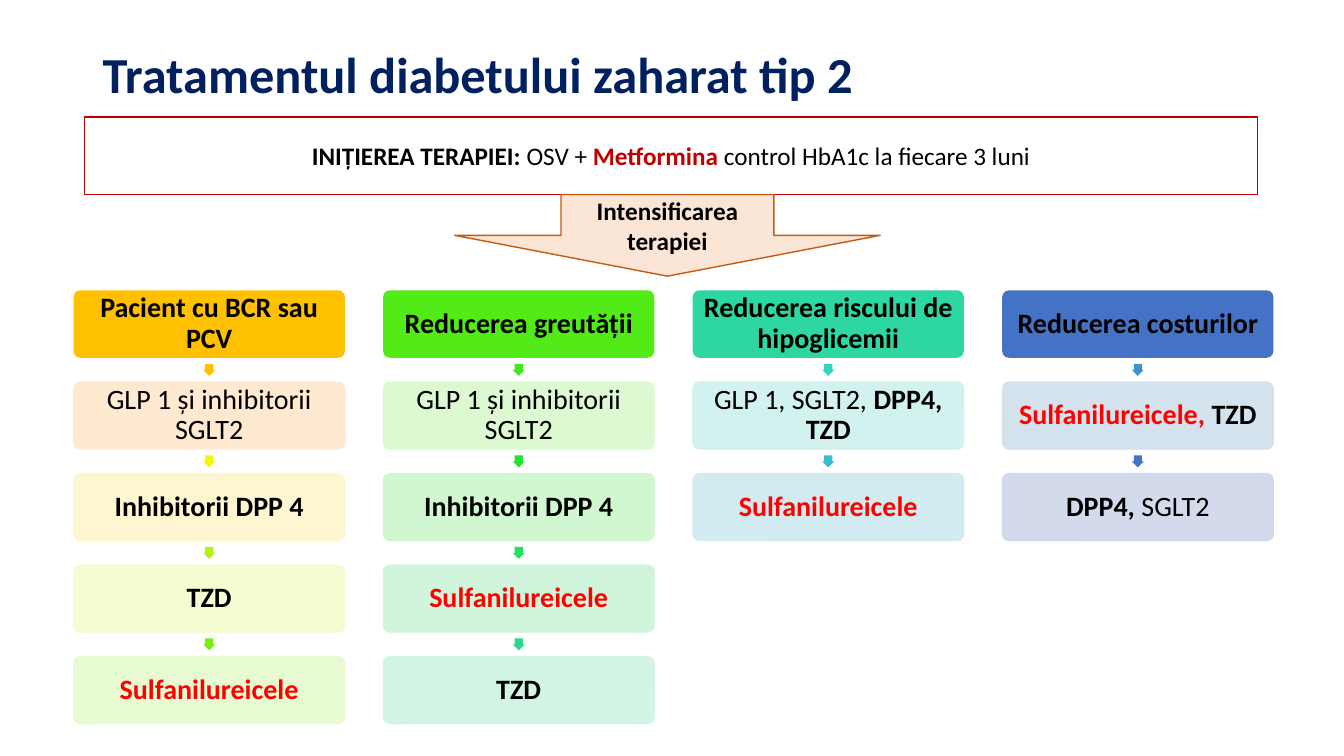
from dataclasses import dataclass

from lxml import etree
from pptx import Presentation
from pptx.dml.color import RGBColor
from pptx.enum import shapes, text
from pptx.oxml.ns import qn
from pptx.util import Inches, Pt

COLORS = {
    "white": "FFFFFF", "black": "000000", "red": "FF0000",
    "navy": "002060", "crimson": "C00000",
    "peach": "FBE5D6", "rust": "C55A11",
    "bcr_box_0": "FFC000", "bcr_box_1": "FFE8CC", "bcr_box_2": "FEF6CC",
    "bcr_box_3": "F5FCCC", "bcr_box_4": "E6FACC",
    "bcr_arrow_1": "FFC000", "bcr_arrow_2": "F6F906",
    "bcr_arrow_3": "B4F40D", "bcr_arrow_4": "78EE13",
    "weight_box_0": "53EB17", "weight_box_1": "D9F9CC", "weight_box_2": "CCF7CD",
    "weight_box_3": "CDF5D9", "weight_box_4": "CDF3E3",
    "weight_arrow_1": "42E919", "weight_arrow_2": "1FE42C",
    "weight_arrow_3": "26DE62", "weight_arrow_4": "2CD992",
    "hypo_box_0": "2ED7A1", "hypo_box_1": "CDF1ED", "hypo_box_2": "CEE9EF",
    "hypo_arrow_1": "32D4BC", "hypo_arrow_2": "38BDCE",
    "cost_box_0": "4472C4", "cost_box_1": "CFDFEC", "cost_box_2": "CFD6EA",
    "cost_arrow_1": "3E95C9", "cost_arrow_2": "4472C4",
}
FONT = "Calibri"
LEFT, TOP = 0.73, 2.88
BOX_W, BOX_H = 2.69, 0.67
COL_PITCH, ROW_PITCH = 3.07, 0.908
ARROW = 0.12
INSET = 0.03


@dataclass(frozen=True)
class Run:
    text: str
    bold: bool = True
    color: str = "black"


@dataclass(frozen=True)
class Column:
    key: str
    steps: list[list[Run]]


GLP1 = [Run("GLP 1 și inhibitorii SGLT2", bold=False)]
DPP4 = [Run("Inhibitorii DPP 4")]
TZD = [Run("TZD")]
SULFA = [Run("Sulfanilureicele", color="red")]

COLUMNS = [
    Column("bcr", [[Run("Pacient cu BCR sau PCV")], GLP1, DPP4, TZD, SULFA]),
    Column("weight", [[Run("Reducerea greutății")], GLP1, DPP4, SULFA, TZD]),
    Column("hypo", [
        [Run("Reducerea riscului de hipoglicemii")],
        [Run("GLP 1, SGLT2, ", bold=False), Run("DPP4, TZD")],
        SULFA,
    ]),
    Column("cost", [
        [Run("Reducerea costurilor")],
        [Run("Sulfanilureicele, ", color="red"), Run("TZD")],
        [Run("DPP4, "), Run("SGLT2", bold=False)],
    ]),
]


def rgb(name: str) -> RGBColor:
    return RGBColor.from_string(COLORS[name])


def add_text(sp, runs: list[Run], size: int, spacing: float = 1.0,
             align=text.PP_ALIGN.CENTER, inset: float | None = None) -> None:
    tf = sp.text_frame
    tf.word_wrap = True
    tf.vertical_anchor = text.MSO_ANCHOR.MIDDLE
    if inset is not None:
        tf.margin_left = tf.margin_right = Inches(inset)
        tf.margin_top = tf.margin_bottom = Inches(inset)
    p = tf.paragraphs[0]
    p.alignment = align
    p.line_spacing = spacing
    for run in runs:
        r = p.add_run()
        r.text = run.text
        r.font.name = FONT
        r.font.size = Pt(size)
        r.font.bold = run.bold
        r.font.color.rgb = rgb(run.color)


def add_block(s, kind, x: float, y: float, w: float, h: float,
              fill: str, line: str | None = None, width: float = 1):
    sp = s.shapes.add_shape(kind, Inches(x), Inches(y), Inches(w), Inches(h))
    sp.shadow.inherit = False
    sp.fill.solid()
    sp.fill.fore_color.rgb = rgb(fill)
    if line is None:
        sp.line.fill.background()
    else:
        sp.line.color.rgb = rgb(line)
        sp.line.width = Pt(width)
    return sp


def set_opacity(sp, percent: int) -> None:
    for clr in sp._element.spPr.iter(qn("a:srgbClr")):
        etree.SubElement(clr, qn("a:alpha")).set("val", str(percent * 1000))


def draw_column(s, index: int, column: Column) -> None:
    x = LEFT + index * COL_PITCH
    for row, runs in enumerate(column.steps):
        y = TOP + row * ROW_PITCH
        fill = f"{column.key}_box_{row}"
        if row:
            arrow = add_block(s, shapes.MSO_SHAPE.RIGHT_ARROW,
                              x + (BOX_W - ARROW) / 2,
                              y - (ROW_PITCH - BOX_H + ARROW) / 2,
                              ARROW, ARROW, f"{column.key}_arrow_{row}")
            arrow.rotation = 90
            arrow.adjustments[0] = 0.667
        sp = add_block(s, shapes.MSO_SHAPE.ROUNDED_RECTANGLE, x, y, BOX_W, BOX_H,
                       fill, fill if row else None, 0.5)
        sp.adjustments[0] = 0.1
        if row:
            set_opacity(sp, 90)
        add_text(sp, runs, 20, 0.9, inset=INSET)


def main() -> None:
    prs = Presentation()
    prs.slide_width, prs.slide_height = Inches(13.33), Inches(7.5)
    s = prs.slides.add_slide(prs.slide_layouts[6])

    title = s.shapes.add_textbox(Inches(0.92), Inches(0.36), Inches(11.5), Inches(0.81))
    add_text(title, [Run("Tratamentul diabetului zaharat tip 2", color="navy")],
             36, 0.9, text.PP_ALIGN.LEFT)

    for index, column in enumerate(COLUMNS):
        draw_column(s, index, column)

    start = add_block(s, shapes.MSO_SHAPE.RECTANGLE, 0.84, 1.16, 11.63, 0.77,
                      "white", "crimson")
    add_text(start, [
        Run("INIȚIEREA TERAPIEI: "),
        Run("OSV + ", bold=False),
        Run("Metformina", color="crimson"),
        Run(" control HbA1c la fiecare 3 luni", bold=False),
    ], 18)

    intensify = add_block(s, shapes.MSO_SHAPE.DOWN_ARROW, 4.51, 1.93, 4.22, 0.81,
                          "peach", "rust")
    add_text(intensify, [Run("Intensificarea terapiei")], 18)

    prs.save("out.pptx")


if __name__ == "__main__":
    main()
